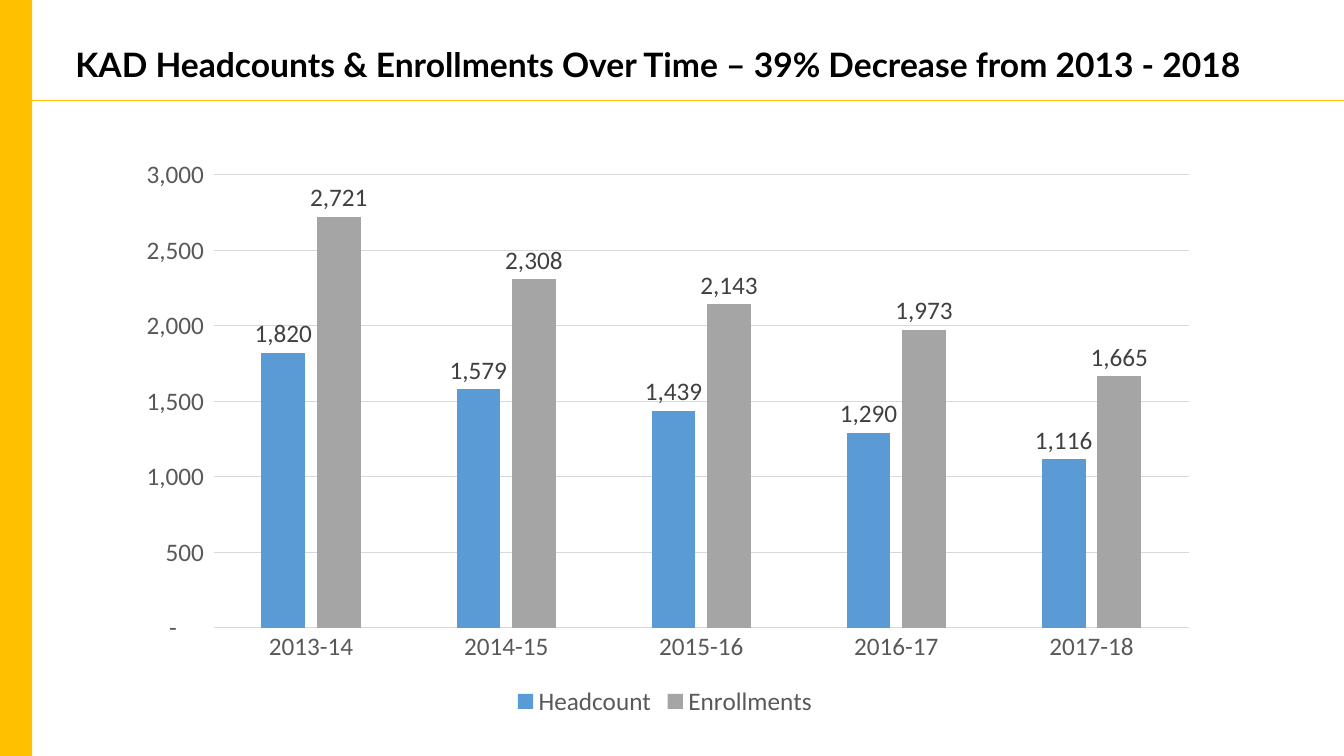
import pptx
import pptx.util
import pptx.chart.data
import pptx.dml.color
import pptx.enum.chart
import pptx.enum.shapes
import pptx.enum.text
import pptx.oxml.ns
import lxml.etree

Inches, Pt = pptx.util.Inches, pptx.util.Pt
WIDTH, HEIGHT, BAR_W, RULE_Y = 13.33, 7.5, 0.32, 1
COLORS = {
    "accent": "FFC000", "title": "000000", "axis": "595959", "label": "404040",
    "grid": "D9D9D9", "Headcount": "5B9BD5", "Enrollments": "A5A5A5",
}
YEARS = ["2013-14", "2014-15", "2015-16", "2016-17", "2017-18"]
SERIES = {
    "Headcount": [1820, 1579, 1439, 1290, 1116],
    "Enrollments": [2721, 2308, 2143, 1973, 1665],
}
NUMBER_FORMAT = '_(* #,##0_);_(* \\(#,##0\\);_(* "-"??_);_('


def rgb(name):
    return pptx.dml.color.RGBColor.from_string(COLORS[name])


def set_font(font, name, size, color, bold=False):
    font.name, font.size, font.bold = name, Pt(size), bold
    font.color.rgb = rgb(color)


def set_line(line, color, width):
    line.color.rgb = rgb(color)
    line.width = Pt(width)


def set_numbers(part):
    part.number_format = NUMBER_FORMAT
    part.number_format_is_linked = False


def add_text(s, text, box, *, font, size, color, bold=False, spacing=1.0):
    tf = s.shapes.add_textbox(*map(Inches, box)).text_frame
    tf.word_wrap = True
    tf.vertical_anchor = pptx.enum.text.MSO_ANCHOR.MIDDLE
    p = tf.paragraphs[0]
    p.line_spacing = spacing
    r = p.add_run()
    r.text = text
    set_font(r.font, font, size, color, bold)


def add_frame(s, x, y, w, h):
    # Side bar
    sp = s.shapes.add_shape(pptx.enum.shapes.MSO_SHAPE.RECTANGLE,
                            Inches(x), Inches(y), Inches(BAR_W), Inches(h))
    sp.shadow.inherit = False
    sp.fill.solid()
    sp.fill.fore_color.rgb = rgb("accent")
    sp.line.fill.background()
    # Rule under the title
    rule = s.shapes.add_connector(
        pptx.enum.shapes.MSO_CONNECTOR.STRAIGHT,
        Inches(x + BAR_W), Inches(y + RULE_Y), Inches(x + w), Inches(y + RULE_Y))
    set_line(rule.line, "accent", 0.5)
    lxml.etree.SubElement(rule._element.spPr, pptx.oxml.ns.qn("a:effectLst"))


def add_enrollment_chart(s, x, y, w, h):
    data = pptx.chart.data.CategoryChartData(number_format=NUMBER_FORMAT)
    data.categories = YEARS
    for name, values in SERIES.items():
        data.add_series(name, values)
    chart = s.shapes.add_chart(pptx.enum.chart.XL_CHART_TYPE.COLUMN_CLUSTERED,
                               Inches(x), Inches(y), Inches(w), Inches(h), data).chart
    chart.has_title = False
    set_font(chart.font, "Calibri", 18, "title")

    # Legend
    chart.has_legend = True
    chart.legend.position = pptx.enum.chart.XL_LEGEND_POSITION.BOTTOM
    chart.legend.include_in_layout = False
    set_font(chart.legend.font, "Calibri", 18, "axis")

    # Axes
    for axis in (chart.category_axis, chart.value_axis):
        axis.major_tick_mark = pptx.enum.chart.XL_TICK_MARK.NONE
        axis.minor_tick_mark = pptx.enum.chart.XL_TICK_MARK.NONE
        set_font(axis.tick_labels.font, "Calibri", 18, "axis")
    set_line(chart.category_axis.format.line, "grid", 0.75)
    values = chart.value_axis
    values.minimum_scale, values.maximum_scale, values.major_unit = 0, 3000, 500
    values.format.line.fill.background()
    values.has_major_gridlines = True
    set_line(values.major_gridlines.format.line, "grid", 0.75)
    set_numbers(values.tick_labels)

    # Columns and their labels
    plot = chart.plots[0]
    plot.vary_by_categories = False
    plot.gap_width, plot.overlap = 219, -27
    for series in plot.series:
        series.format.fill.solid()
        series.format.fill.fore_color.rgb = rgb(series.name)
        labels = series.data_labels
        labels.show_value = True
        labels.position = pptx.enum.chart.XL_LABEL_POSITION.OUTSIDE_END
        set_font(labels.font, "Calibri", 18, "label")
        set_numbers(labels)


def main():
    prs = pptx.Presentation()
    prs.slide_width, prs.slide_height = Inches(WIDTH), Inches(HEIGHT)
    s = prs.slides.add_slide(prs.slide_layouts[6])
    add_text(s, "KAD Headcounts & Enrollments Over Time – 39% Decrease from 2013 - 2018",
             (0.65, 0.32, 11.89, 0.68), font="Lato", size=24, color="title",
             bold=True, spacing=0.9)
    add_frame(s, 0, 0, WIDTH, HEIGHT)
    add_enrollment_chart(s, 1.18, 1.47, 10.83, 5.69)
    prs.save("out.pptx")


if __name__ == "__main__":
    main()
